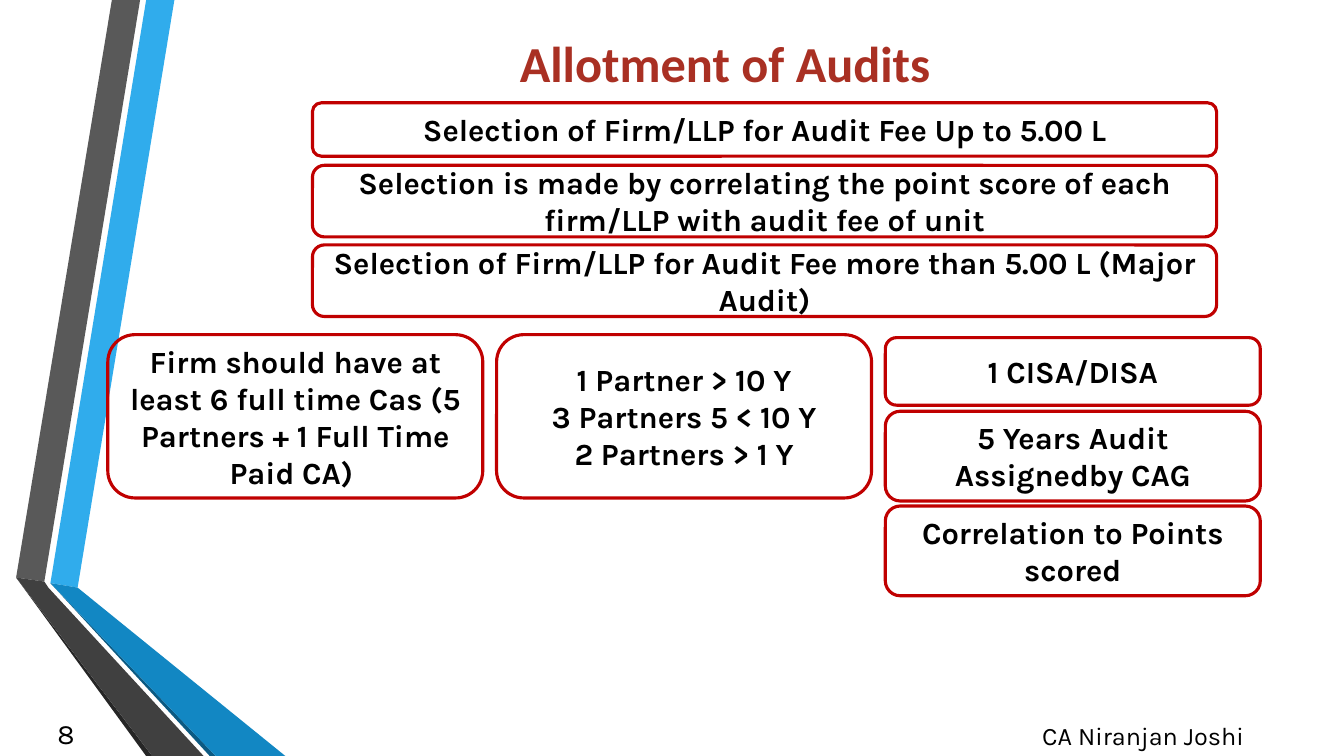
from dataclasses import dataclass

from pptx import Presentation
from pptx.dml.color import RGBColor
from pptx.enum.shapes import MSO_SHAPE
from pptx.enum.text import MSO_ANCHOR, MSO_AUTO_SIZE, PP_ALIGN
from pptx.util import Inches, Pt

ROUNDED = MSO_SHAPE.ROUNDED_RECTANGLE
TOP, MIDDLE = MSO_ANCHOR.TOP, MSO_ANCHOR.MIDDLE
CENTER, RIGHT = PP_ALIGN.CENTER, PP_ALIGN.RIGHT
NO_AUTOFIT = MSO_AUTO_SIZE.NONE
TITLE_ONLY = 5
COLUMNS, ROWS = 40, 30


@dataclass(frozen=True)
class Theme:
    title_font: str = "Calibri"
    body_font: str = "Karla"
    title_color: str = "A93023"
    text_color: str = "000000"
    border_color: str = "C00000"
    light_blue: str = "30ACEC"
    blue: str = "1287C3"
    navy: str = "0C5A82"
    gray: str = "595959"
    charcoal: str = "404040"
    black: str = "262626"
    title_size: int = 36
    box_size: int = 22
    number_size: int = 20
    footer_size: int = 18
    border_width: float = 2.25


class SlideBuilder:
    """Places elements on a grid of COLUMNS by ROWS."""

    def __init__(self, deck, theme):
        self.theme = theme
        self.page = deck.slides.add_slide(deck.slide_layouts[TITLE_ONLY])
        self.column = deck.slide_width / COLUMNS
        self.row = deck.slide_height / ROWS

    def point(self, x, y):
        return round(x * self.column), round(y * self.row)

    def area(self, x, y, width, height):
        return *self.point(x, y), *self.point(width, height)

    def fill_text(self, box, lines, size, font=None, color=None, bold=False,
                  align=CENTER, anchor=MIDDLE):
        frame = box.text_frame
        frame.word_wrap = True
        frame.auto_size = NO_AUTOFIT
        frame.vertical_anchor = anchor
        for index, line in enumerate(lines):
            para = frame.add_paragraph() if index else frame.paragraphs[0]
            para.alignment = align
            span = para.add_run()
            span.text = line
            span.font.name = font or self.theme.body_font
            span.font.size = Pt(size)
            span.font.bold = bold
            span.font.color.rgb = RGBColor.from_string(color or self.theme.text_color)

    def ribbon(self, color, *corners):
        start, *others = [self.point(*corner) for corner in corners]
        builder = self.page.shapes.build_freeform(*start)
        builder.add_line_segments(others, close=True)
        shape = builder.convert_to_shape()
        shape.shadow.inherit = False
        shape.fill.solid()
        shape.fill.fore_color.rgb = RGBColor.from_string(color)
        shape.line.fill.background()

    def title(self, text, *area):
        box = self.page.shapes.title
        box.left, box.top, box.width, box.height = self.area(*area)
        self.fill_text(box, [text], self.theme.title_size, self.theme.title_font,
                       self.theme.title_color, bold=True)

    def label(self, text, size, *area, **style):
        box = self.page.shapes.add_textbox(*self.area(*area))
        self.fill_text(box, [text], size, **style)

    def rounded_box(self, lines, *area):
        box = self.page.shapes.add_shape(ROUNDED, *self.area(*area))
        box.shadow.inherit = False
        box.fill.background()
        box.line.color.rgb = RGBColor.from_string(self.theme.border_color)
        box.line.width = Pt(self.theme.border_width)
        self.fill_text(box, lines, self.theme.box_size, bold=True)


def draw_ribbons(slide):
    theme = slide.theme
    gray_bend, blue_bend = (0.48, 22.92), (1.5, 23.14)
    gray_inner, blue_inner = (1.32, 23.08), (2.31, 23.32)
    gray_foot, blue_foot = (4.53, 30), (6.42, 30)
    slide.ribbon(theme.light_blue, blue_bend, blue_inner, (5.19, 0), (4.35, 0))
    slide.ribbon(theme.gray, (4.17, 0), (3.33, 0), gray_bend, gray_inner)
    slide.ribbon(theme.black, gray_bend, (4.35, 30), gray_foot)
    slide.ribbon(theme.navy, blue_bend, (6.24, 30), blue_foot)
    slide.ribbon(theme.blue, blue_bend, blue_foot, (8.49, 30), blue_inner)
    slide.ribbon(theme.charcoal, (6.06, 30), (1.44, 23.32), gray_inner,
                 gray_bend, gray_foot)


def draw_selection_rules(slide):
    rules = [
        ("Selection of Firm/LLP for Audit Fee Up to 5.00 L", 4.08, 2.12),
        ("Selection is made by correlating the point score of each "
         "firm/LLP with audit fee of unit", 6.56, 2.84),
        ("Selection of Firm/LLP for Audit Fee more than 5.00 L (Major Audit)",
         9.72, 2.84),
    ]
    for text, top, height in rules:
        slide.rounded_box([text], 9.3, top, 26.91, height)


def draw_major_audit_criteria(slide):
    left, step, width = 3.21, 11.57, 11.16
    criteria = [
        (0, 13.28, 6.48, ["Firm should have at least 6 full time Cas "
                          "(5 Partners + 1 Full Time Paid CA) "]),
        (1, 13.28, 6.48, ["1 Partner > 10 Y", "3 Partners 5 < 10 Y",
                          "2 Partners > 1 Y"]),
        (2, 13.4, 2.68, ["1 CISA/DISA"]),
        (2, 16.32, 3.56, ["5 Years Audit Assignedby CAG"]),
        (2, 20.08, 3.56, ["Correlation to Points scored"]),
    ]
    for position, top, height, lines in criteria:
        slide.rounded_box(lines, left + position * step, top, width, height)


def main():
    deck = Presentation()
    deck.slide_width, deck.slide_height = Inches(13.33), Inches(7.5)
    theme = Theme()
    slide = SlideBuilder(deck, theme)
    draw_ribbons(slide)
    slide.title("Allotment of Audits", 6.96, 1, 29.25, 2.96)
    slide.label("8", theme.number_size, 0.72, 28.28, 1.8, 1.6, align=RIGHT)
    slide.label("CA Niranjan Joshi", theme.footer_size, 28.77, 28.4, 10.5, 1.6,
                anchor=TOP)
    draw_selection_rules(slide)
    draw_major_audit_criteria(slide)
    deck.save("out.pptx")


if __name__ == "__main__":
    main()
